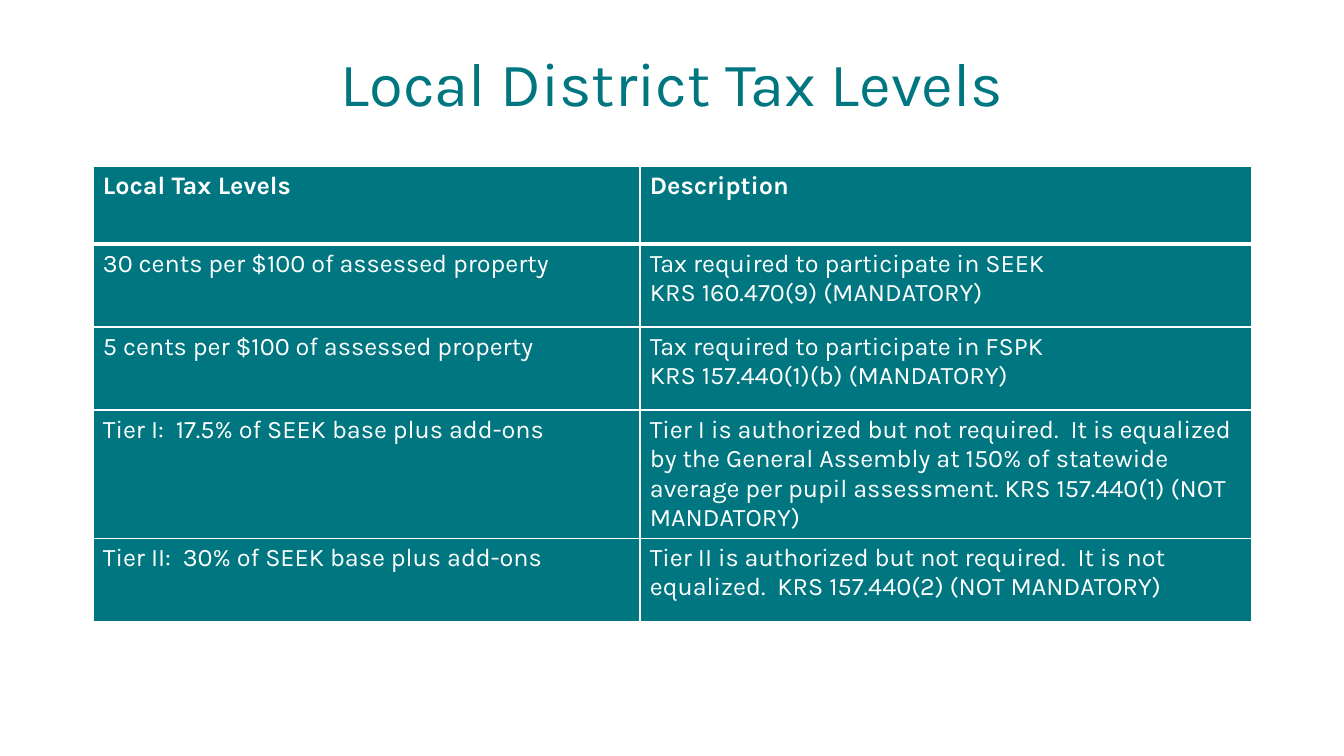
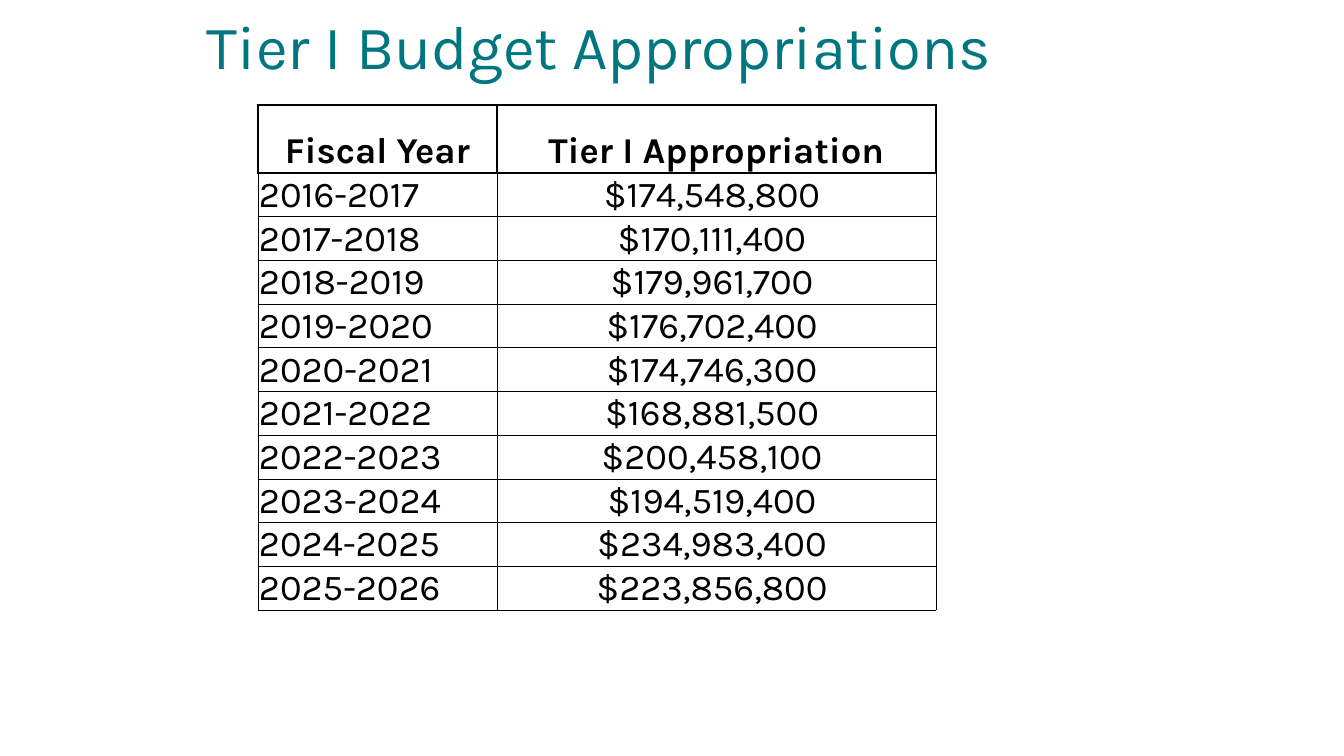
from lxml.etree import SubElement
from pptx import Presentation
from pptx.dml.color import RGBColor
from pptx.enum.text import MSO_ANCHOR, PP_ALIGN
from pptx.oxml.ns import qn
from pptx.util import Emu, Pt

EMU_PER_PX = 914400 / 100.8
FONT = "Karla"
TEAL = "007780"
WHITE = "FFFFFF"
BLACK = "000000"

TAX_LEVELS = [
    ("Local Tax Levels", "Description"),
    ("30 cents per $100 of assessed property",
     "Tax required to participate in SEEK\nKRS 160.470(9) (MANDATORY)"),
    ("5 cents per $100 of assessed property",
     "Tax required to participate in FSPK\nKRS 157.440(1)(b) (MANDATORY)"),
    ("Tier I:  17.5% of SEEK base plus add-ons",
     "Tier I is authorized but not required.  It is equalized by the General Assembly "
     "at 150% of statewide average per pupil assessment. KRS 157.440(1) (NOT MANDATORY)"),
    ("Tier II:  30% of SEEK base plus add-ons",
     "Tier II is authorized but not required.  It is not equalized.  "
     "KRS 157.440(2) (NOT MANDATORY)"),
]

FIRST_YEAR = 2016
APPROPRIATIONS = [174548800, 170111400, 179961700, 176702400, 174746300,
                  168881500, 200458100, 194519400, 234983400, 223856800]


def px(length):
    return Emu(round(length * EMU_PER_PX))


def color(value):
    return RGBColor.from_string(value)


class Deck:
    """Holds the shared style and the current slide."""

    def __init__(self):
        self.deck = Presentation()
        self.deck.slide_width = px(1344)
        self.deck.slide_height = px(756)
        self.page = None

    def add_page(self):
        self.page = self.deck.slides.add_slide(self.deck.slide_layouts[5])
        self.page.background.fill.solid()
        self.page.background.fill.fore_color.rgb = color(WHITE)

    def style(self, para, size, ink, align, bold=False):
        para.alignment = align
        for span in para.runs:
            span.font.name = FONT
            span.font.size = Pt(size)
            span.font.bold = bold
            span.font.color.rgb = color(ink)

    def title(self, text, left, top, width, height):
        box = self.page.shapes.title
        box.left, box.top, box.width, box.height = map(px, (left, top, width, height))
        frame = box.text_frame
        frame.text = text
        frame.word_wrap = True
        frame.vertical_anchor = MSO_ANCHOR.MIDDLE
        frame.paragraphs[0].line_spacing = 0.9
        self.style(frame.paragraphs[0], 44, TEAL, PP_ALIGN.CENTER)

    def border(self, cell, side, ink, width):
        line = SubElement(cell._tc.get_or_add_tcPr(), qn(f"a:ln{side}"), w=str(Pt(width)))
        fill = SubElement(line, qn("a:solidFill"))
        SubElement(fill, qn("a:srgbClr"), val=ink)

    def table(self, rows, left, top, widths, heights, size, ink, line, header_line,
              body_line, rule, margins, anchor, header_align, aligns, fill=None):
        frame = self.page.shapes.add_table(len(rows), len(widths), px(left), px(top),
                                           px(sum(widths)), px(sum(heights)))
        table = frame.table
        table.first_row = table.horz_banding = False
        for column, width in zip(table.columns, widths):
            column.width = px(width)
        for row, height in zip(table.rows, heights):
            row.height = px(height)
        for r, texts in enumerate(rows):
            side_width = body_line if r else header_line
            top_width = rule if r == 1 else side_width
            bottom_width = side_width if r else rule
            for c, text in enumerate(texts):
                cell = table.cell(r, c)
                cell.text = text
                (cell.margin_left, cell.margin_top,
                 cell.margin_right, cell.margin_bottom) = map(px, margins)
                cell.vertical_anchor = anchor
                for side, width in zip("LRTB", (side_width, side_width, top_width, bottom_width)):
                    self.border(cell, side, line, width)
                if fill:
                    cell.fill.solid()
                    cell.fill.fore_color.rgb = color(fill)
                else:
                    cell.fill.background()
                for para in cell.text_frame.paragraphs:
                    self.style(para, size, ink, aligns[c] if r else header_align, bold=r == 0)


def main():
    show = Deck()

    show.add_page()
    show.title("Local District Tax Levels", 93, 40, 1159, 94)
    show.table(TAX_LEVELS, 93, 166, [547, 612], [78, 83, 83, 118, 83],
               size=18, ink=WHITE, line=WHITE, header_line=1, body_line=1, rule=3,
               margins=(10, 5, 10, 5), anchor=MSO_ANCHOR.TOP,
               header_align=PP_ALIGN.LEFT, aligns=[PP_ALIGN.LEFT] * 2, fill=TEAL)

    show.add_page()
    show.title("Tier I Budget Appropriations", 35, 9, 1129, 81)
    rows = [("Fiscal Year", "Tier I Appropriation")]
    rows += [(f"{year}-{year + 1}", f"${amount:,} ")
             for year, amount in enumerate(APPROPRIATIONS, FIRST_YEAR)]
    show.table(rows, 258, 105, [239, 439], [68] + [43] * len(APPROPRIATIONS),
               size=26, ink=BLACK, line=BLACK, header_line=1, body_line=0.5, rule=1,
               margins=(1, 1, 1, 0), anchor=MSO_ANCHOR.BOTTOM,
               header_align=PP_ALIGN.CENTER, aligns=[PP_ALIGN.LEFT, PP_ALIGN.CENTER])

    show.deck.save("out.pptx")


if __name__ == "__main__":
    main()
